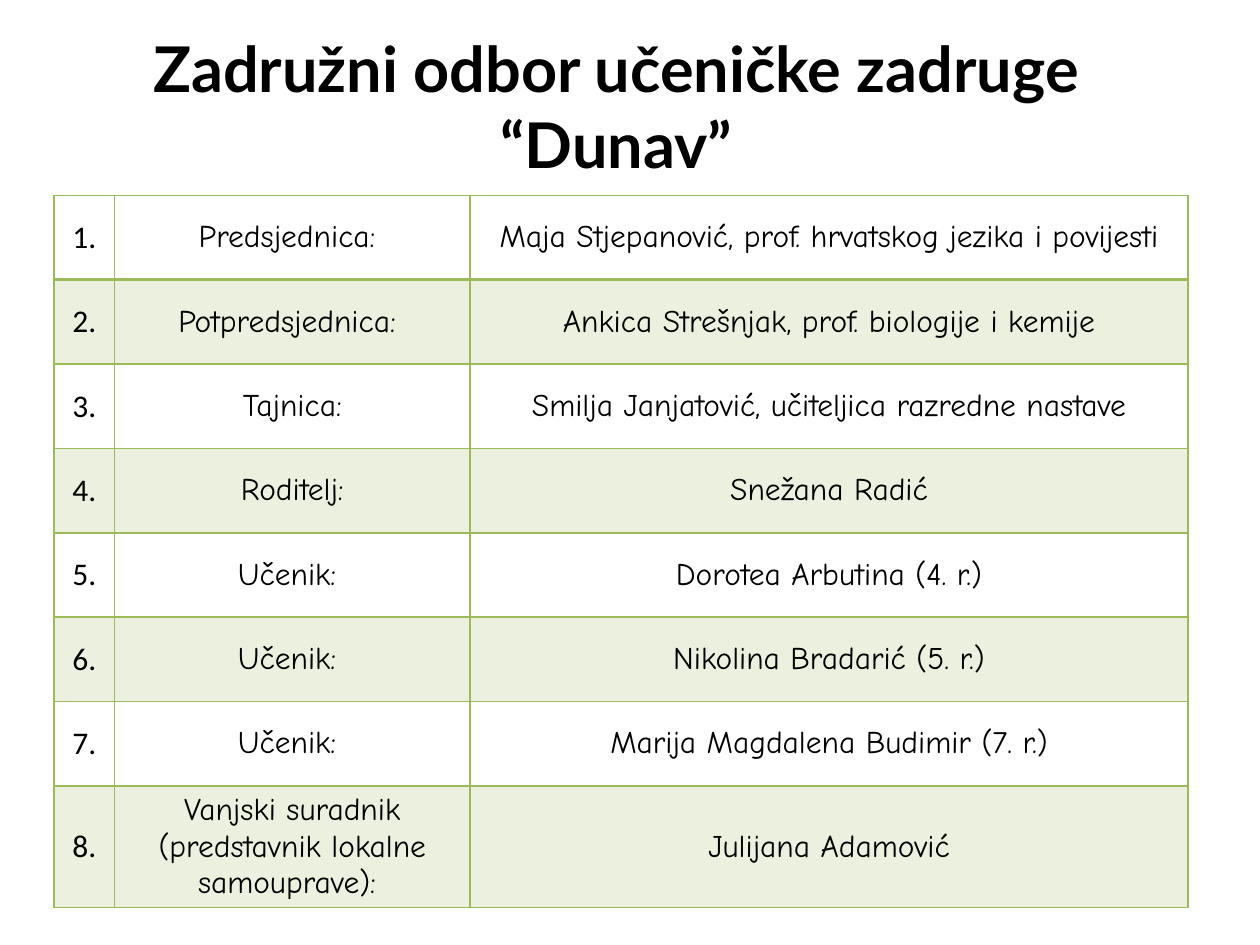
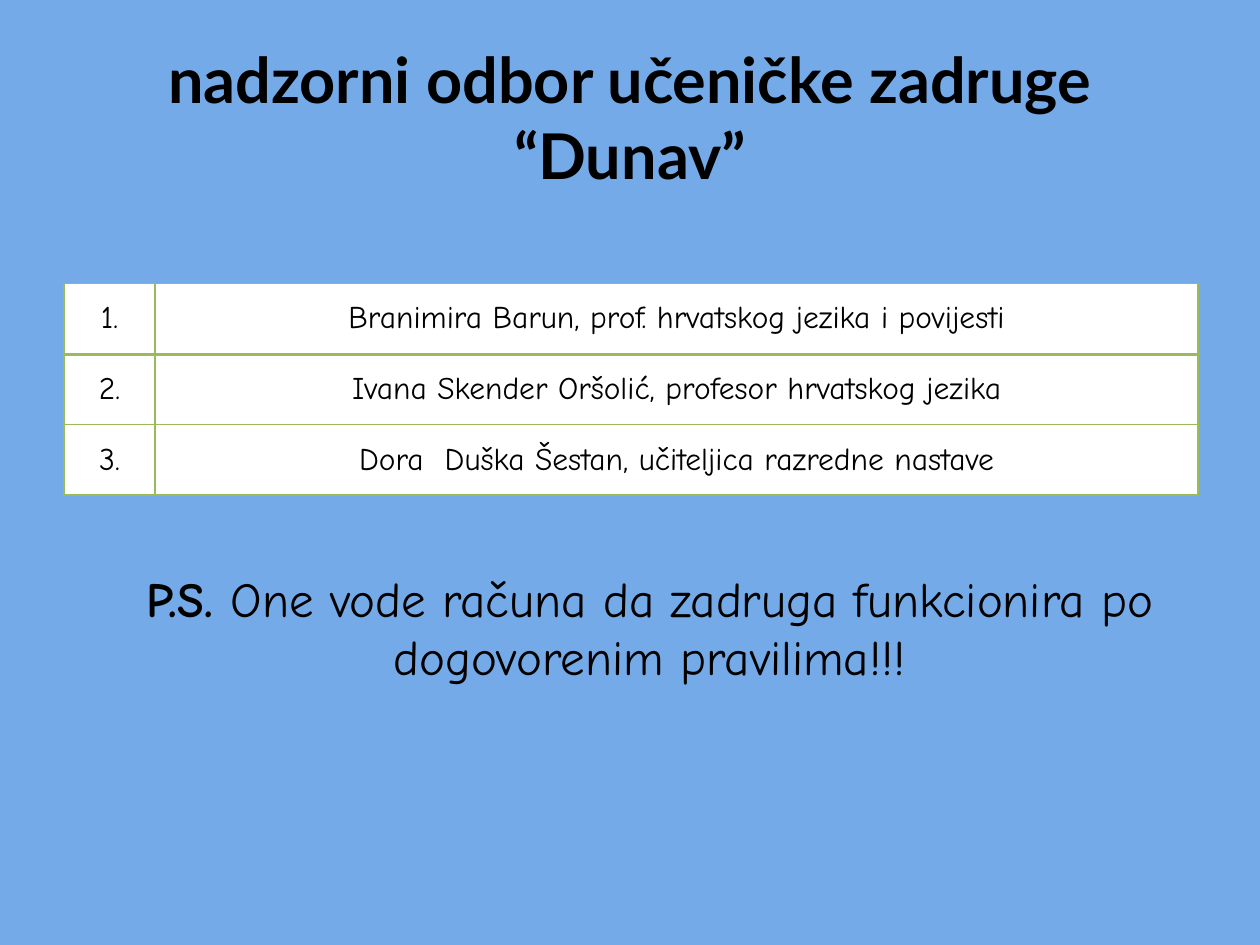
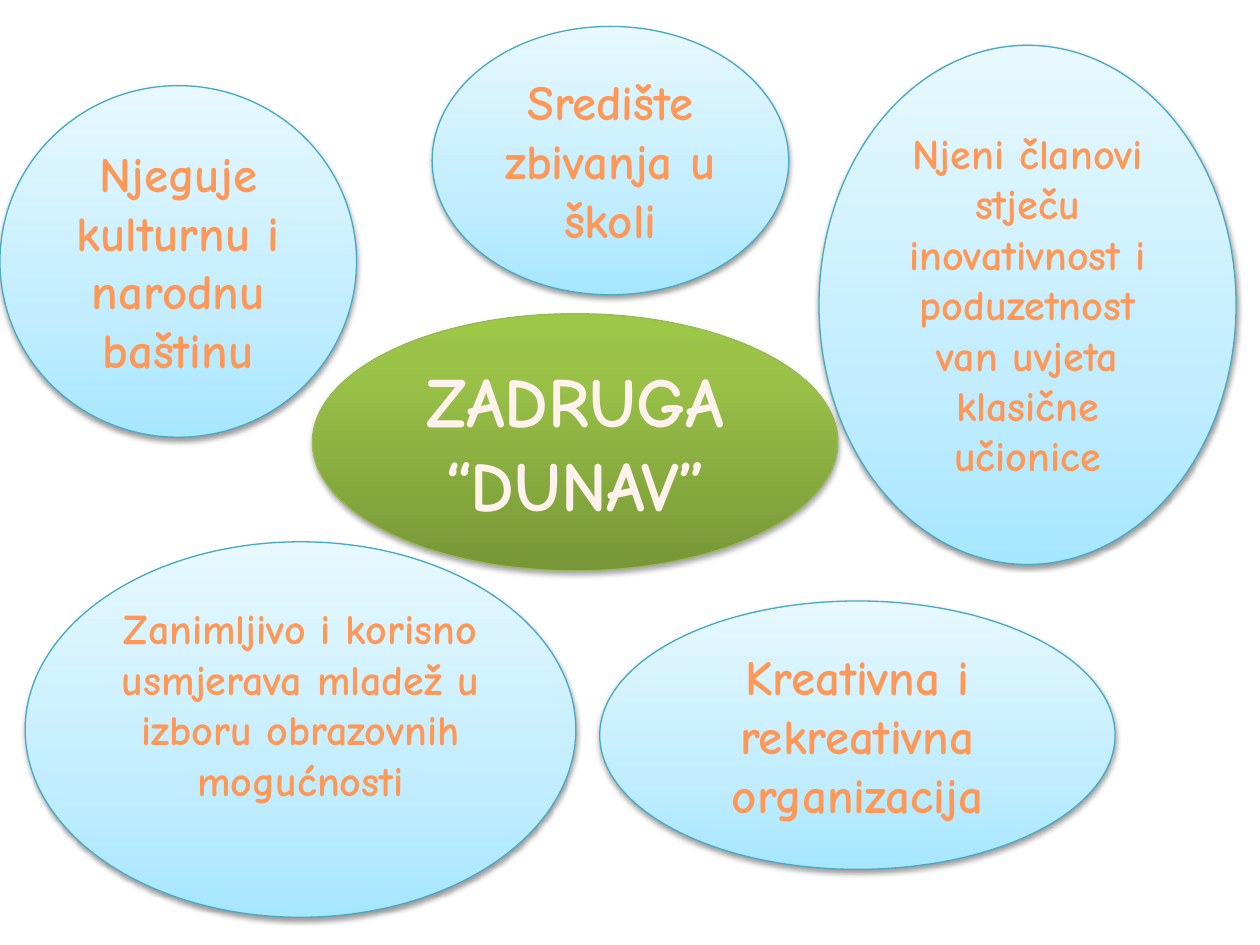
"""Build three slides about the school cooperative: two boards and its aims."""
from pptx import Presentation
from pptx.dml.color import RGBColor as Rgb
from pptx.enum.shapes import MSO_SHAPE as Kind
from pptx.enum.text import MSO_ANCHOR as Anchor, MSO_AUTO_SIZE as Fit, PP_ALIGN as Align
from pptx.oxml import parse_xml
from pptx.oxml.ns import nsdecls, qn
from pptx.util import Pt

PX = 9144
BLACK, WHITE, GREEN, PALE = "000000", "FFFFFF", "9BBB59", "EBF1DE"
BLUE, CREAM, AMBER = "73AAE7", "FFF2ED", "FF9856"
HEAD, HAND, PLAIN = "Lato", "Comic Neue", "Calibri"
NS = nsdecls("a")


def ink(target, hue):
    target.rgb = Rgb.from_string(hue)


def write(frame, text, face, size, hue=BLACK, bold=False):
    par = frame.paragraphs[0]
    par.alignment = Align.CENTER
    run = par.add_run()
    run.text = text
    run.font.name, run.font.size, run.font.bold = face, Pt(size), bold
    ink(run.font.color, hue)


deck = Presentation()
deck.slide_width, deck.slide_height = 1000 * PX, 750 * PX

main = [
    ("1.", "Predsjednica: ", "Maja Stjepanović, prof. hrvatskog jezika i povijesti"),
    ("2.", "Potpredsjednica: ", "Ankica Strešnjak, prof. biologije i kemije"),
    ("3.", "Tajnica:", "Smilja Janjatović, učiteljica razredne nastave"),
    ("4.", "Roditelj:", "Snežana Radić"),
    ("5.", "Učenik: ", "Dorotea Arbutina (4. r.)"),
    ("6.", "Učenik: ", "Nikolina Bradarić (5. r.)"),
    ("7.", "Učenik: ", "Marija Magdalena Budimir (7. r.)"),
    ("8.", "Vanjski suradnik (predstavnik lokalne samouprave): ", "Julijana Adamović"),
]
audit = [
    ("1.", "Branimira Barun, prof. hrvatskog jezika i povijesti"),
    ("2.", "Ivana Skender Oršolić, profesor hrvatskog jezika"),
    ("3.", "Dora  Duška Šestan, učiteljica razredne nastave"),
]
boards = [
    ("Zadružni odbor učeničke zadruge “Dunav”", (28, 21, 922, 125), WHITE,
     main, (43, 155), (48, 282, 570), 67, PLAIN, (WHITE, PALE)),
    ("nadzorni odbor učeničke zadruge “Dunav”", (50, 30, 900, 125), BLUE,
     audit, (51, 225), (72, 828), 56, HAND, (WHITE, WHITE)),
]

for name, box, back, people, spot, cols, tall, face, bands in boards:
    slide = deck.slides.add_slide(deck.slide_layouts[5])
    slide.background.fill.solid()
    ink(slide.background.fill.fore_color, back)

    title = slide.shapes.title
    title.left, title.top, title.width, title.height = [n * PX for n in box]
    title.text_frame.auto_size = Fit.NONE
    title.text_frame.vertical_anchor = Anchor.MIDDLE
    write(title.text_frame, name, HEAD, 36, bold=True)

    left, top = spot
    grid = slide.shapes.add_table(len(people), len(cols), left * PX, top * PX,
                                  sum(cols) * PX, tall * len(people) * PX).table
    grid.first_row = grid.horz_banding = False
    for col, wide in zip(grid.columns, cols):
        col.width = wide * PX
    for r, row in enumerate(people):
        grid.rows[r].height = tall * PX
        for c, text in enumerate(row):
            cell = grid.cell(r, c)
            cell.vertical_anchor = Anchor.MIDDLE
            write(cell.text_frame, text, HAND if c else face, 18)
            for side in "LRTB":
                thick = 2 if (r, side) in ((0, "B"), (1, "T")) else 1
                cell._tc.get_or_add_tcPr().append(parse_xml(
                    f'<a:ln{side} {NS} w="{Pt(thick)}"><a:solidFill>'
                    f'<a:srgbClr val="{GREEN}"/></a:solidFill></a:ln{side}>'))
            cell.fill.solid()
            ink(cell.fill.fore_color, bands[r % 2])

note = slide.shapes.add_textbox(51 * PX, 446 * PX, 929 * PX, 104 * PX).text_frame
note.word_wrap = True
write(note, "P.S. ", HAND, 28, bold=True)
write(note, "One vode računa da zadruga funkcionira po dogovorenim pravilima!!!", HAND, 28)

slide = deck.slides.add_slide(deck.slide_layouts[6])
slide.background.fill.solid()
ink(slide.background.fill.fore_color, WHITE)

leaf = ([(0, "779737"), (80, "9BC348"), (100, "9DC746")], "98B955", CREAM, 35, 1.8)
sky = ([(0, "A7E6FF"), (35, "C1EDFF"), (100, "E7F8FF")], "46AAC5", AMBER, 38, 1.6)
aims = [
    ("ZADRUGA “DUNAV”", (248, 249, 417, 204), 40, leaf),
    ("Njeguje kulturnu i narodnu baštinu", (0, 68, 283, 279), 28, sky),
    ("Središte zbivanja u školi", (343, 21, 283, 213), 28, sky),
    ("Njeni članovi stječu inovativnost i poduzetnost van uvjeta klasične učionice",
     (650, 36, 331, 412), 24, sky),
    ("Zanimljivo i korisno usmjerava mladež u izboru obrazovnih mogućnosti",
     (20, 430, 437, 298), 24, sky),
    ("Kreativna i rekreativna organizacija", (476, 477, 409, 213), 28, sky),
]
for text, box, size, (stops, edge, hue, shade, drop) in aims:
    oval = slide.shapes.add_shape(Kind.OVAL, *[n * PX for n in box])
    oval.line.width = Pt(0.75)
    ink(oval.line.color, edge)
    oval.shadow.inherit = False
    marks = "".join(f'<a:gs pos="{at * 1000}"><a:srgbClr val="{tint}"/></a:gs>'
                    for at, tint in stops)
    look = oval._element.spPr
    look.find(qn("a:prstGeom")).addnext(parse_xml(
        f'<a:gradFill {NS} rotWithShape="1"><a:gsLst>{marks}</a:gsLst>'
        f'<a:lin ang="16200000" scaled="0"/></a:gradFill>'))
    look.find(qn("a:effectLst")).append(parse_xml(
        f'<a:outerShdw {NS} blurRad="{Pt(3.1)}" dist="{Pt(drop)}" dir="5400000" '
        f'rotWithShape="0"><a:srgbClr val="{BLACK}"><a:alpha val="{shade * 1000}"/>'
        f'</a:srgbClr></a:outerShdw>'))
    oval.text_frame.word_wrap = True
    oval.text_frame.vertical_anchor = Anchor.TOP
    write(oval.text_frame, text, HAND, size, hue, True)

deck.save("out.pptx")
